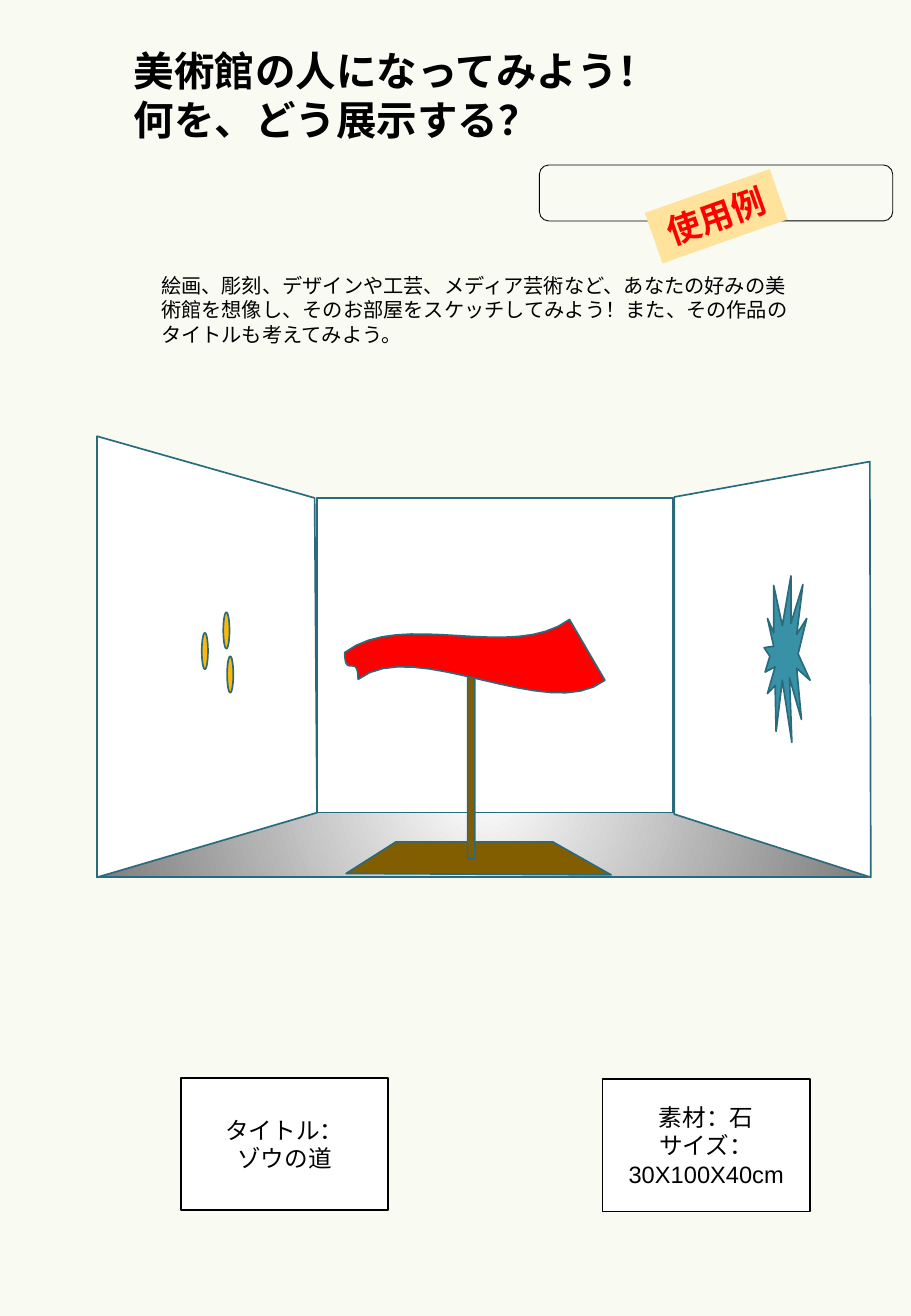
from lxml import etree
from pptx import Presentation
from pptx import util as u
from pptx.dml.color import RGBColor
from pptx.enum import shapes, text
from pptx.oxml import ns

CJK = "Noto Sans CJK JP"
INK, WHITE, TEAL, BROWN, RED = "000000", "FFFFFF", "296B7C", "835E01", "FF0000"
PAPER, GOLD, BLUE, SAND, GREY = "F9FBF3", "FEB80A", "3891A7", "FFE39D", "808080"

HEADING = ["美術館の人になってみよう！", "何を、どう展示する？"]
HEADING_AREA = (2.54, 0.84, 16.13, 2.31)
TASK = ["絵画、彫刻、デザインや工芸、メディア芸術など、あなたの好みの美術館を想像し、"
        "そのお部屋をスケッチしてみよう！また、その作品のタイトルも考えてみよう。"]
TASK_AREA = (3.12, 5.59, 13.94, 1.8)
NAME_AREA = (11.28, 3.45, 7.39, 1.17)
BADGE = ["使用例"]
BADGE_AREA = (13.59, 3.96, 2.77, 1.12)
LABELS = [
    ((3.78, 22.53), ["タイトル：", "ゾウの道"]),
    ((12.6, 22.56), ["素材：石", "サイズ：30X100X40cm"]),
]
LABEL_SIZE = (4.34, 2.77)

FLOOR_AREA = (2.03, 16.43, 16.13, 1.91)
BACK_WALL_AREA = (6.63, 10.41, 7.44, 6.58)
SIDE_WALLS = [
    [(18.21, 18.34), (14.1, 17.02), (14.1, 10.39), (18.19, 9.65)],
    [(2.03, 18.34), (6.63, 16.99), (6.58, 10.41), (2.03, 9.12)],
]
DISCS = [(4.67, 12.8), (4.75, 13.72), (4.22, 13.23)]
DISC_SIZE = (0.13, 0.76)
BURST = [
    (16.36, 13.08), (16.54, 12.04), (16.54, 13.03), (16.79, 12.22),
    (16.66, 13.26), (16.87, 12.93), (16.69, 13.67), (16.94, 14.22),
    (16.66, 13.97), (16.76, 15.04), (16.51, 14.17), (16.56, 15.52),
    (16.36, 14.22), (16.23, 15.29), (16.21, 14.33), (16.05, 14.5),
    (16.21, 13.94), (16, 14.05), (16.1, 13.72), (15.98, 13.54),
    (16.18, 13.51), (16.05, 12.93), (16.18, 13.23), (16.18, 12.24),
]
PLINTH = [(7.24, 18.26), (8.28, 17.6), (11.56, 17.6), (12.78, 18.29)]
POLE_AREA = (9.78, 14.02, 0.15, 3.94)
BANNER_CURVES = [
    [(7.21, 13.64), (8.41, 12.73), (10.72, 13.84), (11.91, 12.95)],
    [(12.65, 14.22), (11.46, 15.14), (8.69, 13.28), (7.49, 14.2)],
    [(7.49, 14.2), (7.49, 13.64), (7.21, 14.2), (7.21, 13.64)],
]


def color(value):
    return RGBColor.from_string(value)


def cm(values):
    return [u.Cm(value) for value in values]


def paint(shape, fill, line, width=1):
    shape.shadow.inherit = False
    if fill:
        shape.fill.solid()
        shape.fill.fore_color.rgb = color(fill)
    else:
        shape.fill.background()
    if line:
        shape.line.color.rgb = color(line)
        shape.line.width = u.Pt(width)
    else:
        shape.line.fill.background()
    return shape


def add_preset(parent, kind, area, fill, line, width=1):
    return paint(parent.add_shape(kind, *cm(area)), fill, line, width)


def add_outline(parent, points, fill):
    start, *rest = [cm(point) for point in points]
    builder = parent.build_freeform(*start)
    builder.add_line_segments(rest, close=True)
    return paint(builder.convert_to_shape(), fill, TEAL)


def curve_points(curve, steps=16):
    for step in range(steps + 1):
        t = step / steps
        weights = ((1 - t) ** 3, 3 * t * (1 - t) ** 2, 3 * t * t * (1 - t), t ** 3)
        yield tuple(sum(w * point[axis] for w, point in zip(weights, curve))
                    for axis in (0, 1))


def write(frame, lines, size, font=CJK, ink=INK, bold=False,
          align=text.PP_ALIGN.LEFT, anchor=text.MSO_ANCHOR.TOP):
    frame.word_wrap = True
    frame.auto_size = text.MSO_AUTO_SIZE.NONE
    frame.vertical_anchor = anchor
    for index, line in enumerate(lines):
        paragraph = frame.add_paragraph() if index else frame.paragraphs[0]
        paragraph.alignment = align
        run = paragraph.add_run()
        run.text = line
        run.font.size = u.Pt(size)
        run.font.bold = bold
        run.font.color.rgb = color(ink)
        run.font.name = font
        east_asian = etree.SubElement(run.font._element, ns.qn("a:ea"))
        east_asian.set("typeface", CJK)


def shade_floor(floor):
    floor.fill.gradient()
    for stop, shade in zip(floor.fill.gradient_stops, (WHITE, GREY)):
        stop.color.rgb = color(shade)
    for stop, position in zip(floor.fill.gradient_stops, (0, 1)):
        stop.position = position
    gradient = floor._element.spPr.find(ns.qn("a:gradFill"))
    linear = gradient.find(ns.qn("a:lin"))
    radial = etree.Element(ns.qn("a:path"), {"path": "circle"})
    etree.SubElement(radial, ns.qn("a:fillToRect"),
                     {"l": "50000", "t": "-80000", "r": "50000", "b": "180000"})
    gradient.replace(linear, radial)


def main():
    deck = Presentation()
    deck.slide_width, deck.slide_height = cm((19.05, 27.51))
    slide = deck.slides.add_slide(deck.slide_layouts[5])
    slide.background.fill.solid()
    slide.background.fill.fore_color.rgb = color(PAPER)
    parts = slide.shapes
    preset = shapes.MSO_SHAPE
    center, middle = text.PP_ALIGN.CENTER, text.MSO_ANCHOR.MIDDLE

    heading = parts.title
    heading.left, heading.top, heading.width, heading.height = cm(HEADING_AREA)
    write(heading.text_frame, HEADING, 24, bold=True)
    task = parts.add_textbox(*cm(TASK_AREA))
    write(task.text_frame, TASK, 12)
    add_preset(parts, preset.ROUNDED_RECTANGLE, NAME_AREA, None, INK, 0.5)

    room = parts.add_group_shape().shapes
    shade_floor(add_preset(room, preset.RECTANGLE, FLOOR_AREA, WHITE, TEAL))
    add_preset(room, preset.RECTANGLE, BACK_WALL_AREA, WHITE, TEAL)
    for wall in SIDE_WALLS:
        add_outline(room, wall, WHITE)

    for corner, lines in LABELS:
        label = add_preset(parts, preset.RECTANGLE, corner + LABEL_SIZE, WHITE, INK)
        write(label.text_frame, lines, 14, "Arial", align=center, anchor=middle)

    for corner in DISCS:
        add_preset(parts, preset.OVAL, corner + DISC_SIZE, GOLD, TEAL)
    add_outline(parts, BURST, BLUE)
    add_outline(parts, PLINTH, BROWN)
    add_preset(parts, preset.CAN, POLE_AREA, BROWN, TEAL)
    banner = [point for curve in BANNER_CURVES for point in curve_points(curve)]
    add_outline(parts, banner, RED)

    badge = add_preset(parts, preset.RECTANGLE, BADGE_AREA, SAND, None)
    badge.rotation = -19.4
    write(badge.text_frame, BADGE, 20, "Calibri", RED, True, center)

    deck.save("out.pptx")


if __name__ == "__main__":
    main()
